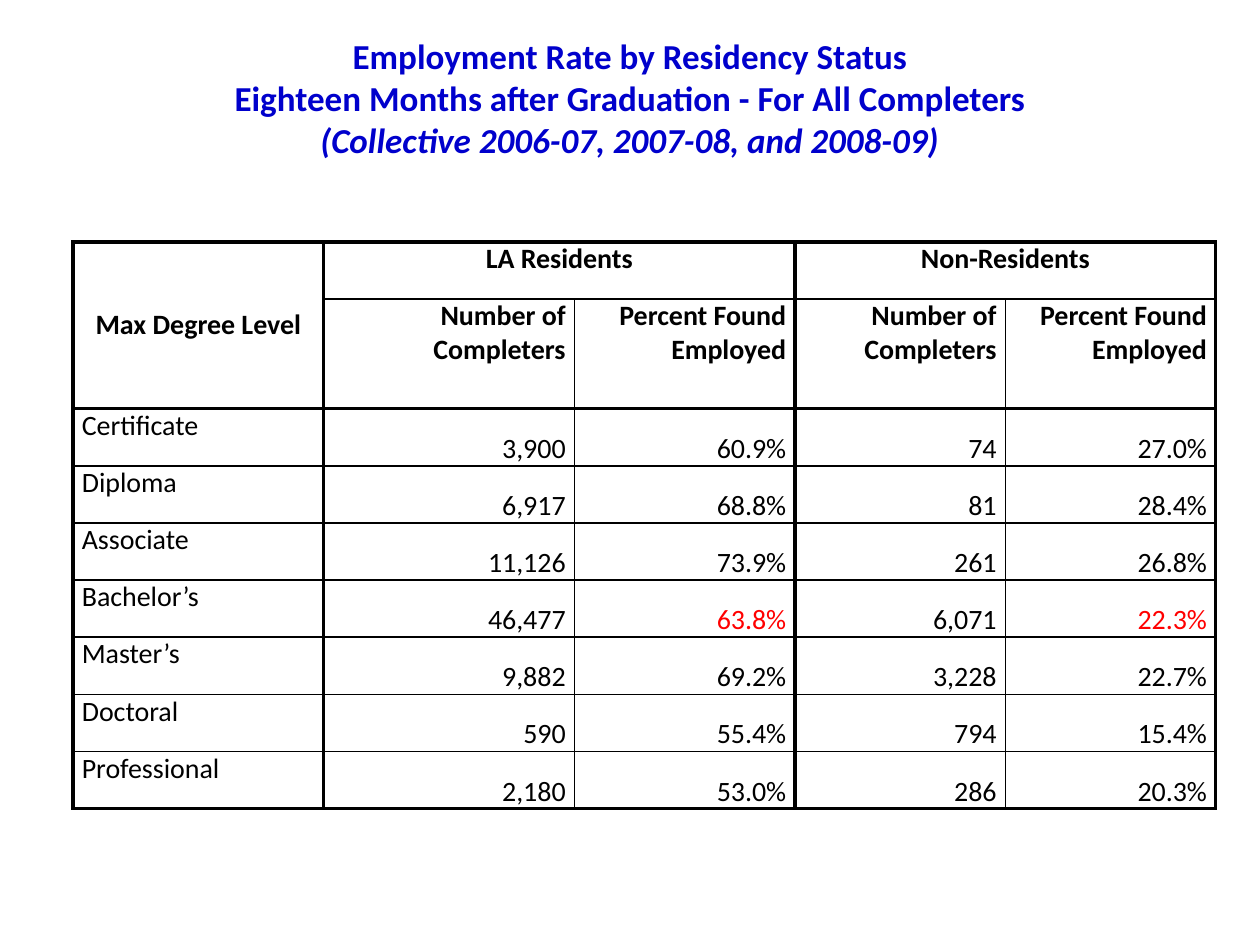
from lxml import etree
from pptx import Presentation
from pptx.dml.color import RGBColor
from pptx.enum.text import MSO_ANCHOR, PP_ALIGN
from pptx.oxml.ns import qn
from pptx.util import Inches, Pt

TOP, MIDDLE, BOTTOM = MSO_ANCHOR.TOP, MSO_ANCHOR.MIDDLE, MSO_ANCHOR.BOTTOM
LEFT, CENTER, RIGHT = PP_ALIGN.LEFT, PP_ALIGN.CENTER, PP_ALIGN.RIGHT

BLUE = RGBColor(0x00, 0x00, 0xCC)
BLACK = RGBColor(0x00, 0x00, 0x00)
RED = RGBColor(0xFF, 0x00, 0x00)

FONT = "Calibri"
THIN, HEAVY = Pt(1), Pt(2.25)
HEAVY_COLUMN_EDGES = {0, 1, 3, 5}
HEAVY_ROW_EDGES = {0, 2, 9}
COLUMN_WIDTHS = [1.99, 1.99, 1.75, 1.67, 1.67]
SUBHEADER_ROW, SUBHEADER_HEIGHT = 1, 0.87

TITLE = [
    "Employment Rate by Residency Status",
    "Eighteen Months after Graduation - For All Completers",
    "(Collective 2006-07, 2007-08, and 2008-09)",
]
MEASURES = ["Number of Completers", "Percent Found Employed"]
ROWS = [
    ["Max Degree Level", "LA Residents", "", "Non-Residents", ""],
    [""] + MEASURES * 2,
    ["Certificate", "3,900", "60.9%", "74", "27.0%"],
    ["Diploma", "6,917", "68.8%", "81", "28.4%"],
    ["Associate", "11,126", "73.9%", "261", "26.8%"],
    ["Bachelor’s", "46,477", "63.8%", "6,071", "22.3%"],
    ["Master’s", "9,882", "69.2%", "3,228", "22.7%"],
    ["Doctoral", "590", "55.4%", "794", "15.4%"],
    ["Professional", "2,180", "53.0%", "286", "20.3%"],
]
MERGES = [((0, 0), (1, 0)), ((0, 1), (0, 2)), ((0, 3), (0, 4))]
HIGHLIGHTS = {"63.8%", "22.3%"}


def style_font(font, size, color, bold):
    """Apply the slide typeface with a size, colour and weight."""
    font.name, font.size, font.bold = FONT, Pt(size), bold
    font.color.rgb = color


def add_title(page, left, top, width, height):
    """Place the three centred title lines, the last in italics."""
    box = page.shapes.add_textbox(Inches(left), Inches(top), Inches(width), Inches(height))
    frame = box.text_frame
    frame.word_wrap = True
    frame.vertical_anchor = MIDDLE
    frame.margin_top, frame.margin_bottom = 0, Inches(0.31)
    frame.text = "\n".join(TITLE)
    for para in frame.paragraphs:
        para.alignment = CENTER
        for span in para.runs:
            style_font(span.font, 20, BLUE, True)
    frame.paragraphs[-1].runs[0].font.italic = True


def set_borders(cell, row, column):
    """Draw each cell edge heavy or thin according to its grid line."""
    edges = [
        ("a:lnL", column in HEAVY_COLUMN_EDGES),
        ("a:lnR", column + cell.span_width in HEAVY_COLUMN_EDGES),
        ("a:lnT", row in HEAVY_ROW_EDGES),
        ("a:lnB", row + cell.span_height in HEAVY_ROW_EDGES),
    ]
    properties = cell._tc.get_or_add_tcPr()
    for tag, heavy in edges:
        line = etree.SubElement(properties, qn(tag), w=str(HEAVY if heavy else THIN))
        fill = etree.SubElement(line, qn("a:solidFill"))
        etree.SubElement(fill, qn("a:srgbClr"), val=str(BLACK))


def cell_layout(row, column):
    """Return the alignment and anchor for a grid position."""
    if row == 0:
        return CENTER, MIDDLE if column == 0 else TOP
    if column == 0:
        return LEFT, TOP
    return RIGHT, TOP if row == SUBHEADER_ROW else BOTTOM


def fill_cell(cell, row, column):
    """Write and format one cell."""
    text = ROWS[row][column]
    cell.margin_left = cell.margin_right = Inches(0.07)
    cell.margin_top = cell.margin_bottom = 0
    alignment, cell.vertical_anchor = cell_layout(row, column)
    cell.text_frame.text = text
    para = cell.text_frame.paragraphs[0]
    para.alignment = alignment
    color = RED if text in HIGHLIGHTS else BLACK
    for span in para.runs:
        style_font(span.font, 16, color, row <= SUBHEADER_ROW)
    set_borders(cell, row, column)
    cell.fill.background()


def add_rate_table(page, left, top, width, height):
    """Place the employment rate table with its merged headers."""
    box = page.shapes.add_table(
        len(ROWS), len(COLUMN_WIDTHS), Inches(left), Inches(top), Inches(width), Inches(height)
    )
    table = box.table
    table.first_row = table.horz_banding = False
    for column, column_width in zip(table.columns, COLUMN_WIDTHS):
        column.width = Inches(column_width)
    for row in table.rows:
        row.height = Inches((height - SUBHEADER_HEIGHT) / (len(ROWS) - 1))
    table.rows[SUBHEADER_ROW].height = Inches(SUBHEADER_HEIGHT)
    for first, last in MERGES:
        table.cell(*first).merge(table.cell(*last))
    for row in range(len(ROWS)):
        for column in range(len(COLUMN_WIDTHS)):
            cell = table.cell(row, column)
            if not cell.is_spanned:
                fill_cell(cell, row, column)


def main():
    """Build and save the deck."""
    deck = Presentation()
    deck.slide_width, deck.slide_height = Inches(10), Inches(7.5)
    page = deck.slides.add_slide(deck.slide_layouts[6])
    add_title(page, 0.5, 0.3, 9, 1.25)
    add_rate_table(page, 0.58, 1.92, sum(COLUMN_WIDTHS), 4.5)
    deck.save("out.pptx")


if __name__ == "__main__":
    main()
